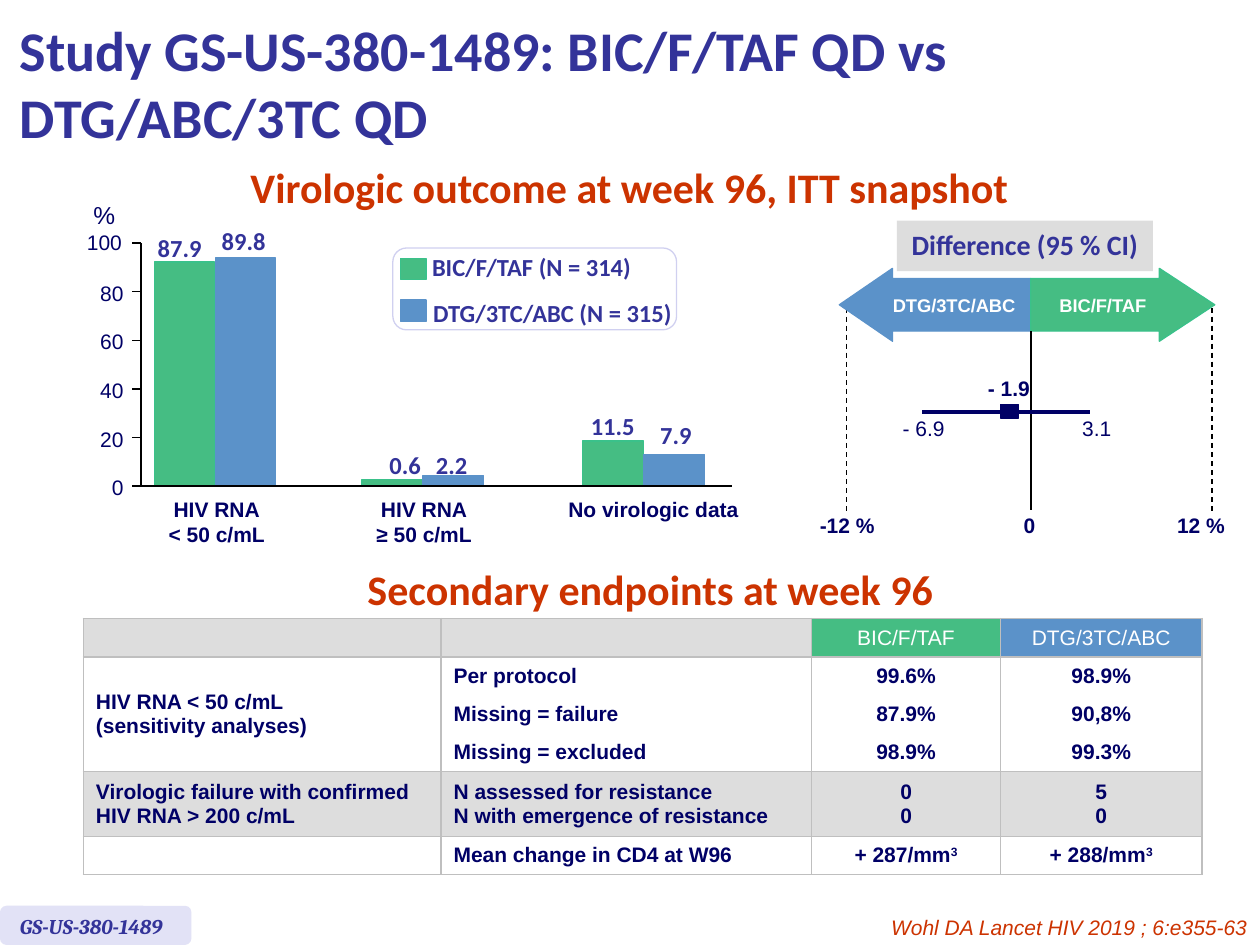
from lxml import etree
from pptx import Presentation
from pptx import util as u
from pptx.dml.color import RGBColor
from pptx.enum import dml, shapes, text
from pptx.oxml.ns import qn

Cm, Pt = u.Cm, u.Pt
KIND = shapes.MSO_SHAPE
LEFT, CENTER, RIGHT = text.PP_ALIGN.LEFT, text.PP_ALIGN.CENTER, text.PP_ALIGN.RIGHT
TOP, MIDDLE = text.MSO_ANCHOR.TOP, text.MSO_ANCHOR.MIDDLE

GREEN, GREEN_EDGE = RGBColor(0x45, 0xBD, 0x83), RGBColor(0x3A, 0xC1, 0x8A)
BLUE = RGBColor(0x5B, 0x92, 0xC9)
INDIGO, NAVY = RGBColor(0x33, 0x33, 0x99), RGBColor(0x00, 0x00, 0x66)
RUST = RGBColor(0xCC, 0x33, 0x00)
GREY, BORDER = RGBColor(0xDD, 0xDD, 0xDD), RGBColor(0xBF, 0xBF, 0xBF)
LILAC, LILAC_EDGE = RGBColor(0xE2, 0xE2, 0xF6), RGBColor(0xD0, 0xD0, 0xF0)
WHITE, BLACK = RGBColor(0xFF, 0xFF, 0xFF), RGBColor(0, 0, 0)

# Content; all lengths are centimetres. In text, "\v" breaks a line and "^" starts a superscript.
TITLE = "Study GS-US-380-1489: BIC/F/TAF QD vs DTG/ABC/3TC QD"
HEADINGS = [
    ("Virologic outcome at week 96, ITT snapshot", (4.7, 3.12, 15.98, 1.27)),
    ("Secondary endpoints at week 96", (7.09, 11.23, 12.04, 1.27)),
]
ARMS = [(GREEN, GREEN_EDGE), (BLUE, BLUE)]
LEGEND = [
    ("BIC/F/TAF (N = 314)", 5.21, (8.46, 4.95, 4.55, 0.86)),
    ("DTG/3TC/ABC (N = 315)", 6.05, (8.48, 5.87, 5.36, 0.86)),
]
# Per outcome: label, label box, left edge of the bars, then per arm
# the value, the drawn bar height and the position of the value.
OUTCOMES = [
    (["HIV RNA", "< 50 c/mL"], (3.33, 9.88, 2.08, 1.27), 3.11,
     [("87.9", 4.52, (3.18, 4.7)), ("89.8", 4.6, (4.47, 4.55))]),
    (["HIV RNA", "≥ 50 c/mL"], (7.57, 9.88, 1.96, 1.27), 7.3,
     [("0.6", 0.13, (7.85, 9.07)), ("2.2", 0.21, (8.79, 9.07))]),
    (["No virologic data"], (11.18, 9.88, 3.99, 0.79), 11.75,
     [("11.5", 0.91, (11.91, 8.28)), ("7.9", 0.64, (13.31, 8.46))]),
]
DIFFERENCE_ARROWS = [
    ("DTG/3TC/ABC", KIND.LEFT_ARROW, (16.92, 5.41, 3.86, 1.47), 0.73, BLUE, BLUE),
    ("BIC/F/TAF", KIND.RIGHT_ARROW, (20.78, 5.41, 3.71, 1.47), 0.76, GREEN, GREEN_EDGE),
]
DIFFERENCE_SCALE = [
    ("-12 %", (16.1, 10.29, 1.96, 0.64)),
    ("0", (20.17, 10.29, 1.17, 0.64)),
    ("12 %", (23.5, 10.29, 1.42, 0.64)),
]
INTERVAL = [
    ("- 1.9", (19.91, 7.62, 0.86, 0.48), True),
    ("- 6.9", (18.19, 8.43, 0.86, 0.48), False),
    ("3.1", (21.82, 8.43, 0.58, 0.48), False),
]
ENDPOINTS = [
    ([""], [""], ["BIC/F/TAF"], ["DTG/3TC/ABC"]),
    (["HIV RNA < 50 c/mL\v(sensitivity analyses)"], ["Per protocol"], ["99.6%"], ["98.9%"]),
    ([""], ["Missing = failure"], ["87.9%"], ["90,8%"]),
    ([""], ["Missing = excluded"], ["98.9%"], ["99.3%"]),
    (["Virologic failure with confirmed HIV RNA > 200 c/mL"],
     ["N assessed for resistance", "N with emergence of resistance"], ["0", "0"], ["5", "0"]),
    ([""], ["Mean change in CD4 at W96"], ["+ 287/mm^3"], ["+ 288/mm^3"]),
]
COLUMN_WIDTHS = [7.21, 7.47, 3.81, 4.06]
ROW_HEIGHTS = [0.77, 0.77, 0.77, 0.77, 1.31, 0.77]
SENSITIVITY_ROWS = (1, 3)

AXIS_X, AXIS_RIGHT, AXIS_ZERO, AXIS_STEP, TICK = 2.84, 14.76, 9.8, 0.98, 0.17
BAR_WIDTH, BAR_PITCH = 1.22, 1.23


def write(frame, lines, size=12, font="Arial", color=NAVY, bold=False, italic=False,
          align=LEFT, spacing=None):
    """Fill a text frame with one paragraph per line; size may be one per line."""
    sizes = size if isinstance(size, list) else [size] * len(lines)
    for index, line in enumerate(lines):
        paragraph = frame.add_paragraph() if index else frame.paragraphs[0]
        paragraph.alignment = align
        if spacing:
            paragraph.line_spacing = spacing
        for row, piece in enumerate(line.split("\v")):
            if row:
                paragraph.add_line_break()
            for level, part in enumerate(piece.split("^")):
                if not part:
                    continue
                run = paragraph.add_run()
                run.text = part
                run.font.size, run.font.name = Pt(sizes[index]), font
                run.font.bold, run.font.italic = bold, italic
                run.font.color.rgb = color
                if level:
                    run.font._element.set("baseline", "30000")
        if not line:
            etree.SubElement(paragraph._p, qn("a:endParaRPr"), sz=str(sizes[index] * 100))


def set_frame(frame, margins=(0, 0), anchor=TOP, wrap=False):
    frame.word_wrap, frame.vertical_anchor = wrap, anchor
    frame.auto_size = text.MSO_AUTO_SIZE.NONE
    frame.margin_left = frame.margin_right = Cm(margins[0])
    frame.margin_top = frame.margin_bottom = Cm(margins[1])


def add_text(slide, box, lines, margins=(0, 0), anchor=TOP, wrap=False, **style):
    shape = slide.shapes.add_textbox(*map(Cm, box))
    set_frame(shape.text_frame, margins, anchor, wrap)
    write(shape.text_frame, lines, **style)


def add_block(slide, kind, box, fill, edge=None, width=0.75):
    shape = slide.shapes.add_shape(kind, *map(Cm, box))
    shape.shadow.inherit = False
    shape.fill.solid()
    shape.fill.fore_color.rgb = fill
    if edge is None:
        shape.line.fill.background()
    else:
        shape.line.color.rgb, shape.line.width = edge, Pt(width)
    return shape


def add_line(slide, start, end, color=BLACK, width=0.75, dash=None):
    line = slide.shapes.add_connector(shapes.MSO_CONNECTOR.STRAIGHT, *map(Cm, start + end))
    line.line.color.rgb, line.line.width = color, Pt(width)
    if dash:
        line.line.dash_style = dash
    etree.SubElement(line._element.spPr, qn("a:effectLst"))


def add_outcome_chart(slide):
    add_block(slide, KIND.ROUNDED_RECTANGLE, (7.92, 5, 5.72, 1.65), WHITE, LILAC_EDGE)
    value_style = dict(size=14, font="Calibri", color=INDIGO, bold=True)
    for (label, top, box), arm in zip(LEGEND, ARMS):
        add_block(slide, KIND.RECTANGLE, (8.08, top, 0.51, 0.43), *arm)
        add_text(slide, box, [label], margins=(0.25, 0.13), **value_style)
    for label, box, left, bars in OUTCOMES:
        add_text(slide, box, label, margins=(0, 0.13), bold=True, align=CENTER)
        for index, (value, height, place) in enumerate(bars):
            bar = (left + index * BAR_PITCH, AXIS_ZERO - height, BAR_WIDTH, height)
            add_block(slide, KIND.RECTANGLE, bar, *ARMS[index])
            add_text(slide, place + (0.89 if len(value) > 3 else 0.64, 0.61), [value],
                     **value_style)
    add_line(slide, (AXIS_X, AXIS_ZERO - 5 * AXIS_STEP), (AXIS_X, AXIS_ZERO))
    add_line(slide, (AXIS_X, AXIS_ZERO), (AXIS_RIGHT, AXIS_ZERO))
    for step in range(6):
        y = AXIS_ZERO - step * AXIS_STEP
        add_line(slide, (AXIS_X, y), (AXIS_X - TICK, y))
        if step < 5:
            add_text(slide, (2.01, y - 0.23, 0.48, 0.46), [str(20 * step)], align=RIGHT)
    add_text(slide, (1.75, 4.04, 0.71, 0.99), ["%", "100"], size=[14, 12], align=CENTER)


def add_difference_plot(slide):
    for x in (17.07, 24.43):
        add_line(slide, (x, 6.2), (x, 10.31), dash=dml.MSO_LINE.DASH)
    for label, box in DIFFERENCE_SCALE:
        add_text(slide, box, [label], anchor=MIDDLE, wrap=True, bold=True,
                 align=CENTER, spacing=0.9)
    for label, kind, box, head, fill, edge in DIFFERENCE_ARROWS:
        arrow = add_block(slide, kind, box, fill, edge)
        arrow.adjustments[0], arrow.adjustments[1] = 0.72, head
        set_frame(arrow.text_frame, (0.25, 0.13), MIDDLE)
        write(arrow.text_frame, [label], size=10.5, color=WHITE, bold=True, align=CENTER)
    for label, box, bold in INTERVAL:
        add_text(slide, box, [label], bold=bold, align=CENTER, spacing=0.9)
    add_line(slide, (20.78, 6.68), (20.78, 10.29), width=1)
    add_line(slide, (18.59, 8.31), (21.97, 8.31), NAVY, 2.25)
    add_block(slide, KIND.RECTANGLE, (20.17, 8.15, 0.36, 0.28), NAVY, NAVY)
    caption = add_block(slide, KIND.RECTANGLE, (18.08, 4.45, 5.16, 1.02), GREY)
    set_frame(caption.text_frame, (0.25, 0), MIDDLE, wrap=True)
    write(caption.text_frame, ["Difference (95 % CI)"], size=16, font="Calibri",
          color=INDIGO, bold=True, align=CENTER, spacing=0.9)


def set_borders(cell, hidden):
    """Draw the four cell borders, leaving out the hidden sides."""
    properties = cell._tc.get_or_add_tcPr()
    for index, side in enumerate("LRTB"):
        line = etree.Element(qn(f"a:ln{side}"), w=str(Pt(1)))
        if side in hidden:
            etree.SubElement(line, qn("a:noFill"))
        else:
            fill = etree.SubElement(line, qn("a:solidFill"))
            etree.SubElement(fill, qn("a:srgbClr"), val=str(BORDER))
        properties.insert(index, line)


def add_endpoint_table(slide):
    size = (sum(COLUMN_WIDTHS), sum(ROW_HEIGHTS))
    table = slide.shapes.add_table(len(ENDPOINTS), len(COLUMN_WIDTHS),
                                   *map(Cm, (1.68, 12.47) + size)).table
    for column, width in zip(table.columns, COLUMN_WIDTHS):
        column.width = Cm(width)
    first, last = SENSITIVITY_ROWS
    for r, cells in enumerate(ENDPOINTS):
        table.rows[r].height = Cm(ROW_HEIGHTS[r])
        for c, lines in enumerate(cells):
            cell = table.cell(r, c)
            cell.vertical_anchor = MIDDLE
            cell.fill.solid()
            header_fill = (GREY, GREY, GREEN, BLUE)[c]
            cell.fill.fore_color.rgb = header_fill if r == 0 else GREY if r == 4 else WHITE
            hidden = ""
            if c and first <= r <= last:
                hidden = ("T" if r > first else "") + ("B" if r < last else "")
            set_borders(cell, hidden)
            write(cell.text_frame, lines, color=NAVY if r else WHITE, bold=r > 0,
                  align=CENTER if c > 1 else LEFT)
    table.cell(first, 0).merge(table.cell(last, 0))


def main():
    presentation = Presentation()
    presentation.slide_width, presentation.slide_height = Cm(25.4), Cm(19.05)
    slide = presentation.slides.add_slide(presentation.slide_layouts[5])
    title = slide.shapes.title
    title.left, title.top, title.width, title.height = map(Cm, (0.15, 0.13, 21.54, 3.07))
    set_frame(title.text_frame, (0.25, 0.13), MIDDLE, wrap=True)
    write(title.text_frame, [TITLE], size=32, font="Calibri", color=INDIGO, bold=True)
    add_outcome_chart(slide)
    add_difference_plot(slide)
    add_endpoint_table(slide)
    for heading, box in HEADINGS:
        add_text(slide, box, [heading], margins=(0.25, 0.13), size=24, font="Calibri",
                 color=RUST, bold=True, align=CENTER)
    add_block(slide, KIND.ROUNDED_RECTANGLE, (0, 18.26, 3.86, 0.79), LILAC)
    add_text(slide, (0.15, 18.29, 3.58, 0.76), ["GS-US-380-1489"], margins=(0.25, 0.13),
             wrap=True, font="Cambria", color=INDIGO, bold=True, italic=True)
    add_text(slide, (6.71, 18.31, 18.69, 0.74), ["Wohl DA Lancet HIV 2019 ; 6:e355-63"],
             margins=(0.25, 0.13), wrap=True, color=RUST, italic=True, align=RIGHT)
    presentation.save("out.pptx")


if __name__ == "__main__":
    main()
